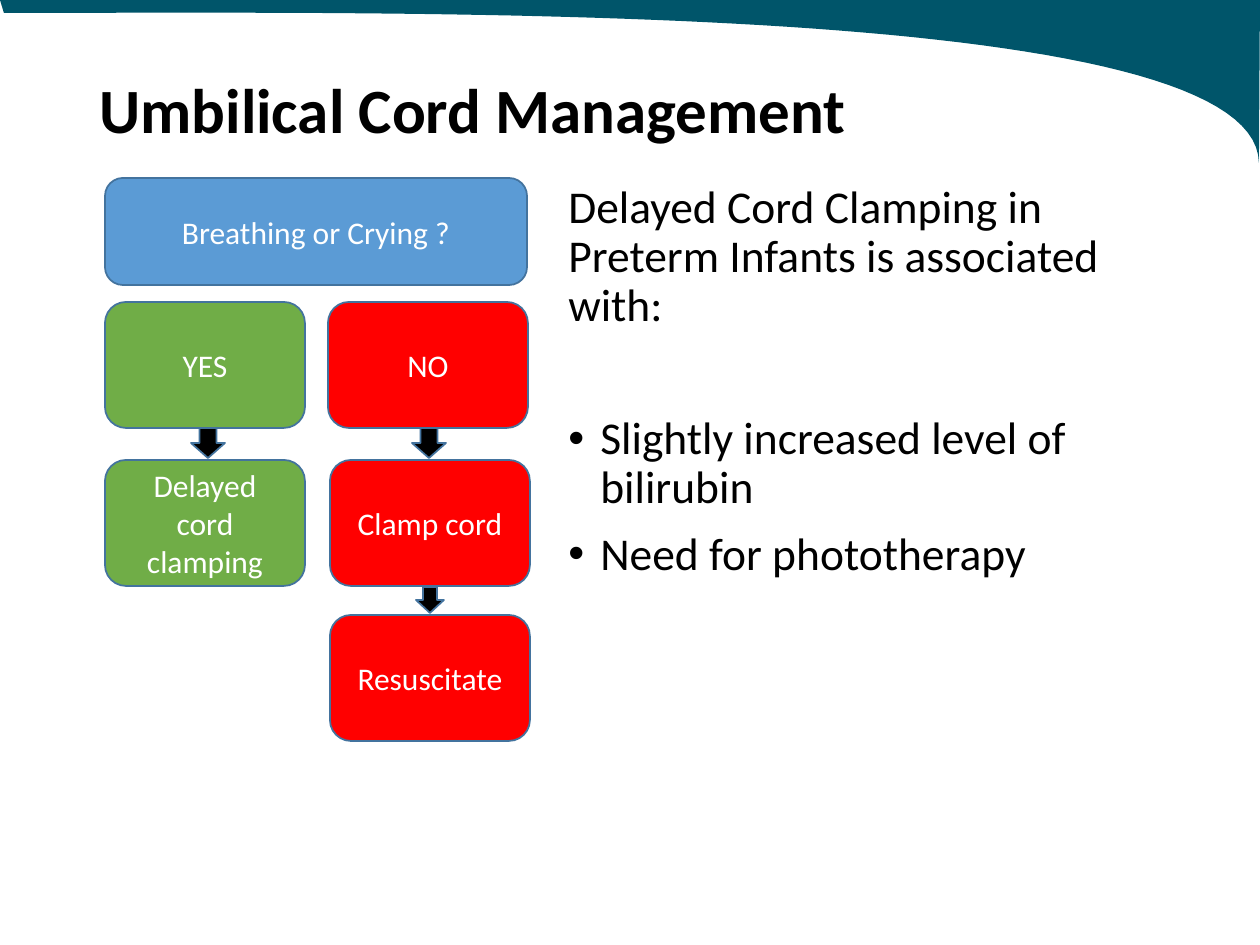
from lxml.etree import SubElement
from pptx import Presentation
from pptx.dml.color import RGBColor
from pptx.enum.shapes import MSO_SHAPE
from pptx.enum.text import MSO_ANCHOR, MSO_AUTO_SIZE, PP_ALIGN
from pptx.oxml.ns import qn
from pptx.util import Emu, Pt

EMU_PER_PX = 914400 / 126
FONT = "Calibri"
BLACK = RGBColor(0x00, 0x00, 0x00)
WHITE = RGBColor(0xFF, 0xFF, 0xFF)
TEAL = RGBColor(0x00, 0x55, 0x6A)
BLUE = RGBColor(0x5B, 0x9B, 0xD5)
GREEN = RGBColor(0x70, 0xAD, 0x47)
RED = RGBColor(0xFF, 0x00, 0x00)
OUTLINE = RGBColor(0x43, 0x73, 0x9E)

BOX_WIDTH, BOX_HEIGHT = 200, 126
YES_LEFT, NO_LEFT, CLAMP_LEFT = 105, 328, 330
QUESTION_TOP, ANSWER_TOP, ACTION_TOP, RESUSCITATE_TOP = 178, 302, 460, 615


def px(length):
    return Emu(round(length * EMU_PER_PX))


def write_text(para, text, size=18, color=BLACK, bold=False,
               align=PP_ALIGN.LEFT, line_spacing=None, space_before=0,
               bullet=False):
    if bullet:
        properties = para._p.get_or_add_pPr()
        properties.set("marL", str(px(32)))
        properties.set("indent", str(px(-32)))
        SubElement(properties, qn("a:buFont"), typeface="Arial")
        SubElement(properties, qn("a:buChar"), char="•")
    para.alignment = align
    para.space_before = Pt(space_before)
    if line_spacing:
        para.line_spacing = line_spacing
    span = para.add_run()
    span.text = text
    span.font.name = FONT
    span.font.size = Pt(size)
    span.font.bold = bold
    span.font.color.rgb = color


def add_block(slide, kind, left, top, width, height, fill):
    shape = slide.shapes.add_shape(kind, px(left), px(top), px(width), px(height))
    shape.shadow.inherit = False
    shape.fill.solid()
    shape.fill.fore_color.rgb = fill
    shape.line.color.rgb = OUTLINE
    shape.line.width = Pt(1)
    return shape


def add_step(slide, text, left, top, fill, width=BOX_WIDTH, height=BOX_HEIGHT):
    box = add_block(slide, MSO_SHAPE.ROUNDED_RECTANGLE, left, top, width, height, fill)
    frame = box.text_frame
    frame.word_wrap = True
    frame.vertical_anchor = MSO_ANCHOR.MIDDLE
    write_text(frame.paragraphs[0], text, color=WHITE, align=PP_ALIGN.CENTER)


def add_arrow(slide, left, top, width, height):
    add_block(slide, MSO_SHAPE.DOWN_ARROW, left, top, width, height, BLACK)


def curve_points(start, control_1, control_2, end, steps=60):
    """Points along a cubic curve, without its start."""
    for step in range(1, steps + 1):
        t = step / steps
        weights = ((1 - t) ** 3, 3 * t * (1 - t) ** 2, 3 * t ** 2 * (1 - t), t ** 3)
        corners = (start, control_1, control_2, end)
        yield tuple(px(sum(w * corner[axis] for w, corner in zip(weights, corners)))
                    for axis in (0, 1))


def add_swoosh(slide):
    builder = slide.shapes.build_freeform(0, 0)
    edge = [(px(1260), 0), (px(1259), px(163))]
    curve = curve_points((1259, 163), (1257, 0), (423, 13), (4, 13))
    builder.add_line_segments([*edge, *curve], close=True)
    swoosh = builder.convert_to_shape()
    swoosh.shadow.inherit = False
    swoosh.fill.solid()
    swoosh.fill.fore_color.rgb = TEAL
    swoosh.line.fill.background()


def format_title(slide):
    title = slide.shapes.title
    title.left, title.top, title.width, title.height = map(px, (87, 50, 1086, 127))
    frame = title.text_frame
    frame.auto_size = MSO_AUTO_SIZE.NONE
    frame.word_wrap = True
    frame.vertical_anchor = MSO_ANCHOR.MIDDLE
    write_text(frame.paragraphs[0], "Umbilical Cord Management",
               size=36, bold=True, line_spacing=0.9)


def add_notes_column(slide):
    box = slide.shapes.add_textbox(px(556), px(178), px(577), px(577))
    frame = box.text_frame
    frame.word_wrap = True
    write_text(frame.paragraphs[0],
               "Delayed Cord Clamping in Preterm Infants is associated with:",
               size=26, line_spacing=0.9)
    for text, gap in (("Slightly increased level of bilirubin", 48),
                      ("Need for phototherapy", 10)):
        write_text(frame.add_paragraph(), text, size=26, line_spacing=0.9,
                   space_before=gap, bullet=True)


def add_flowchart(slide):
    add_step(slide, "Breathing or Crying ?", YES_LEFT, QUESTION_TOP, BLUE,
             width=422, height=107)
    for text, left, top, fill in (
            ("YES", YES_LEFT, ANSWER_TOP, GREEN),
            ("NO", NO_LEFT, ANSWER_TOP, RED),
            ("Delayed cord clamping", YES_LEFT, ACTION_TOP, GREEN),
            ("Clamp cord", CLAMP_LEFT, ACTION_TOP, RED),
            ("Resuscitate", CLAMP_LEFT, RESUSCITATE_TOP, RED)):
        add_step(slide, text, left, top, fill)
    for left in (191, 412):
        add_arrow(slide, left, 428, 34, 30)
    add_arrow(slide, 416, 587, 28, 26)


def main():
    deck = Presentation()
    deck.slide_width, deck.slide_height = px(1260), px(945)
    slide = deck.slides.add_slide(deck.slide_layouts.get_by_name("Title Only"))
    # Heading and corner decoration
    add_swoosh(slide)
    format_title(slide)
    # Left: decision flow; right: effects
    add_notes_column(slide)
    add_flowchart(slide)
    deck.save("out.pptx")


if __name__ == "__main__":
    main()
